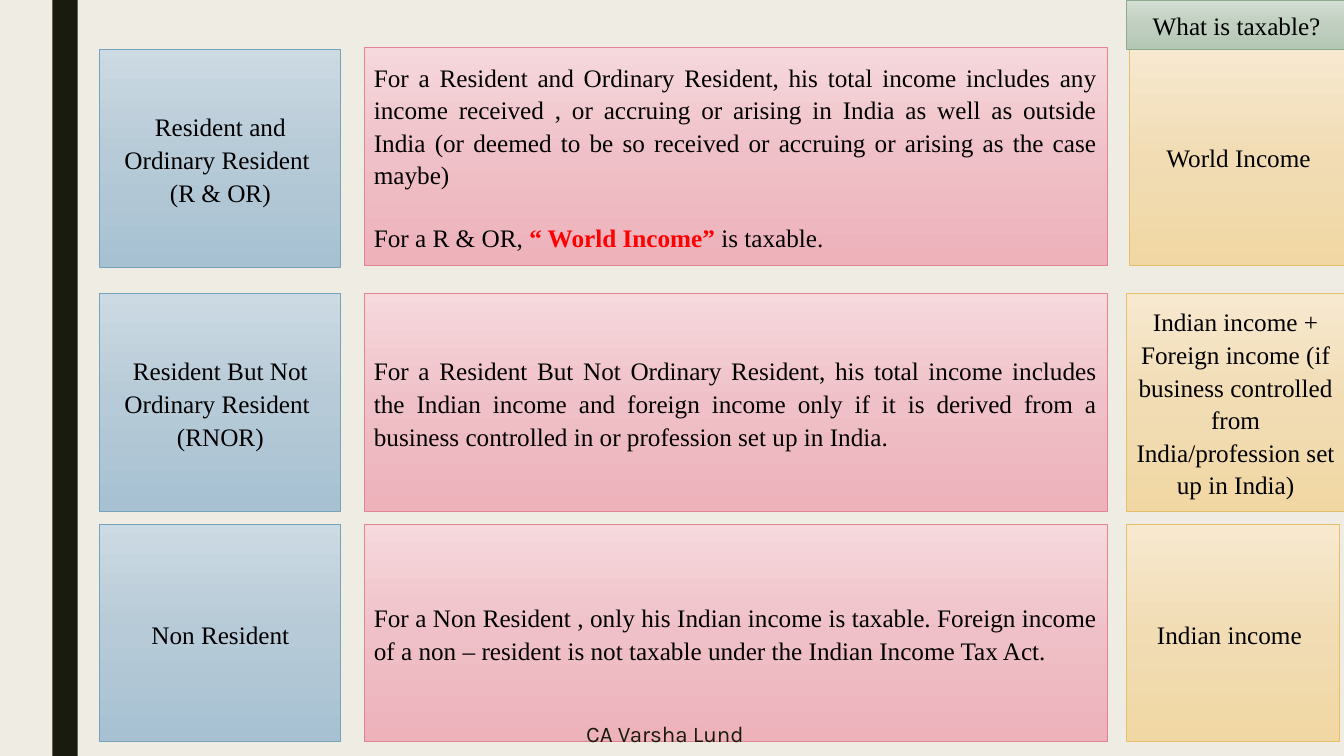
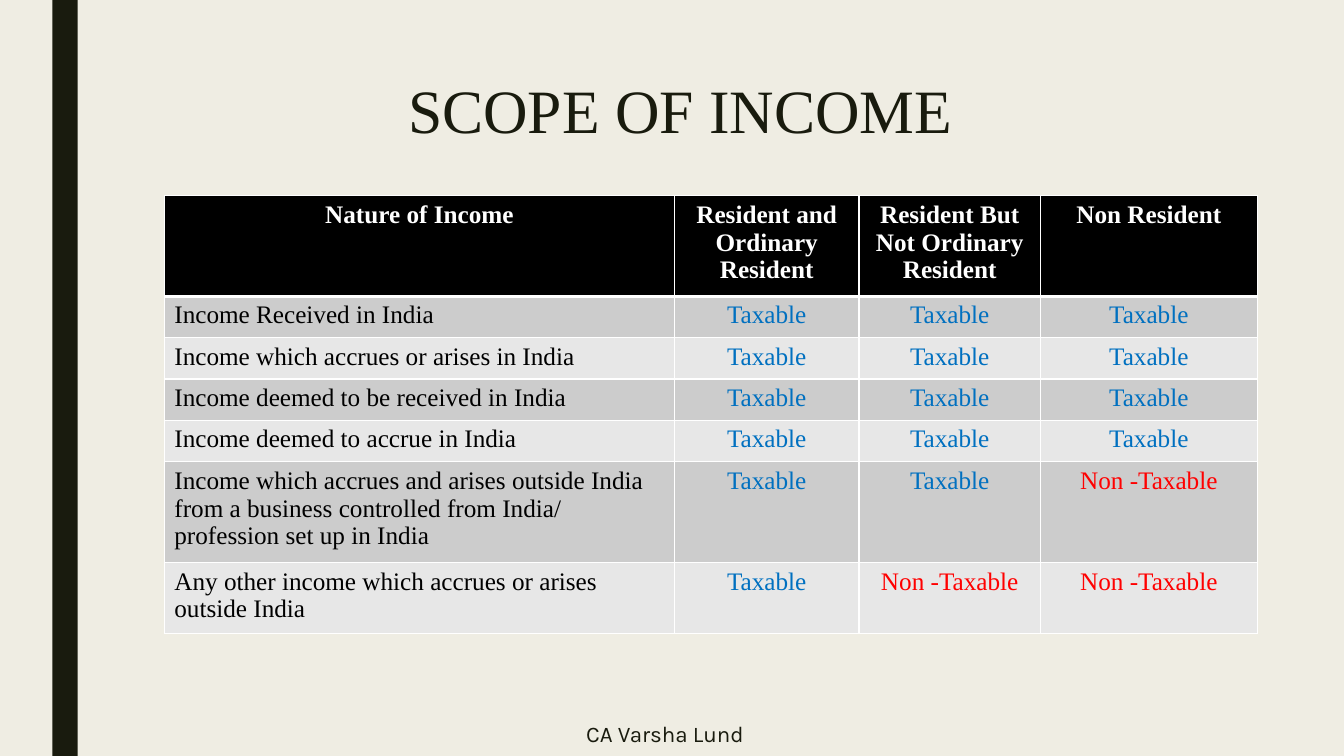
"""Build two slides on which income is taxable for each residential status."""
from copy import deepcopy
from dataclasses import dataclass
from typing import Optional

from lxml.etree import SubElement
from pptx import Presentation
from pptx.dml.color import RGBColor
from pptx.enum.shapes import MSO_SHAPE as Shape
from pptx.enum.text import MSO_ANCHOR as Anchor, PP_ALIGN as Align
from pptx.oxml.ns import qn
from pptx.util import Inches, Pt


@dataclass(frozen=True)
class Tint:
    stops: tuple[str, str, str]
    line: str


@dataclass(frozen=True)
class Theme:
    background: str = "EFEDE3"
    dark: str = "191B0E"
    black: str = "000000"
    white: str = "FFFFFF"
    red: str = "FF0000"
    blue: str = "0070C0"
    bands: tuple[str, str] = ("CCCCCC", "E7E7E7")
    status: Tint = Tint(("CCDAE3", "B6CAD7", "A7C1D2"), "77A2BB")
    rule: Tint = Tint(("F6D9DD", "EFC0C7", "EEB2BB"), "E28394")
    taxable: Tint = Tint(("F7E9D0", "F1DCB4", "F1D7A3"), "E6C069")
    heading: Tint = Tint(("D3DDD3", "C0CFC0", "B4C7B5"), "8DAB8E")
    serif: str = "Times New Roman"
    sans: str = "Karla"
    body_size: float = 18
    title_size: float = 44
    footer_size: float = 16
    box_spacing: float = 1.08
    title_spacing: float = 0.89
    paragraph_gap: float = 21.6


@dataclass(frozen=True)
class Box:
    left: float
    top: float
    width: float
    height: float

    def lengths(self) -> tuple:
        return tuple(Inches(value) for value in (self.left, self.top, self.width, self.height))


@dataclass(frozen=True)
class Piece:
    text: str
    color: str = "000000"
    bold: bool = False


@dataclass(frozen=True)
class Residency:
    top: float
    status: str
    rule: tuple[tuple[Piece, ...], ...]
    taxable: str
    rule_top: Optional[float] = None
    taxable_left: float = 11.17
    taxable_width: float = 2.17


THEME = Theme()
BOX_HEIGHT = 2.16

RESIDENCIES = (
    Residency(
        0.49, "Resident and Ordinary Resident \v(R & OR)",
        ((Piece("For a Resident and Ordinary Resident, his total income includes any income "
                "received , or accruing or arising in India as well as outside India (or deemed "
                "to be so received or accruing or arising as the case maybe)"),),
         (Piece("For a R & OR, "), Piece("“ World Income” ", THEME.red, True),
          Piece("is taxable. "))),
        "World Income", rule_top=0.47, taxable_left=11.2),
    Residency(
        2.91, "Resident But Not Ordinary Resident \v(RNOR)",
        ((Piece("For a Resident But Not Ordinary Resident, his total income includes the Indian "
                "income and foreign income only if it is derived from a business controlled in "
                "or profession set up in India."),),),
        "Indian income + Foreign income (if business controlled from India/profession set up "
        "in India)"),
    Residency(
        5.2, "Non Resident",
        ((Piece("For a Non Resident , only his Indian income is taxable. Foreign income of a "
                "non – resident is not taxable under the Indian Income Tax Act."),),),
        "Indian income ", taxable_width=2.11),
)

COLUMN_WIDTHS = (5.06, 1.83, 1.8, 2.15)
ROW_HEIGHT = 0.41
HEADERS = ("Nature of Income", "Resident and Ordinary Resident",
           "Resident But Not Ordinary Resident", "Non Resident")
INCOMES = (
    ("Income Received in India", 3),
    ("Income which accrues or arises in India", 3),
    ("Income deemed to be received in India", 3),
    ("Income deemed to accrue in India", 3),
    ("Income which accrues and arises outside India\n"
     "from a business controlled from India/ profession set up in India", 2),
    ("Any other income which accrues or arises outside India", 1),
)


def rgb(color: str) -> RGBColor:
    return RGBColor.from_string(color)


def write(paragraph, text: str, *, size: float = THEME.body_size, color: str = THEME.black,
          font: str = THEME.serif, bold: bool = False, align: Align = Align.CENTER,
          spacing: Optional[float] = None) -> None:
    paragraph.alignment = align
    if spacing is not None:
        paragraph.line_spacing = spacing
    for index, line in enumerate(text.split("\v")):
        if index:
            paragraph.add_line_break()
        run = paragraph.add_run()
        run.text = line
        run.font.size = Pt(size)
        run.font.name = font
        run.font.bold = bold
        run.font.color.rgb = rgb(color)


def paragraph_at(frame, index: int):
    return frame.add_paragraph() if index else frame.paragraphs[0]


def add_rectangle(slide, box: Box):
    shape = slide.shapes.add_shape(Shape.RECTANGLE, *box.lengths())
    shape.shadow.inherit = False
    return shape


def add_label(slide, box: Box, text: str, *, anchor: Anchor = Anchor.MIDDLE, **style) -> None:
    frame = slide.shapes.add_textbox(*box.lengths()).text_frame
    frame.word_wrap = True
    frame.vertical_anchor = anchor
    write(frame.paragraphs[0], text, **style)


def fill_gradient(shape, tint: Tint) -> None:
    shape.fill.gradient()
    shape.fill.gradient_angle = 270
    stop_list = shape._element.spPr.find(qn("a:gradFill")).find(qn("a:gsLst"))
    stop_list.insert(1, deepcopy(stop_list[0]))
    for stop, position, color in zip(shape.fill.gradient_stops, (0, 0.5, 1), tint.stops):
        stop.position = position
        stop.color.rgb = rgb(color)


def add_tinted_box(slide, box: Box, tint: Tint, paragraphs: tuple[tuple[Piece, ...], ...],
                   align: Align = Align.CENTER) -> None:
    shape = add_rectangle(slide, box)
    fill_gradient(shape, tint)
    shape.line.color.rgb = rgb(tint.line)
    shape.line.width = Pt(0.5)
    frame = shape.text_frame
    frame.word_wrap = True
    frame.vertical_anchor = Anchor.MIDDLE
    for index, pieces in enumerate(paragraphs):
        paragraph = paragraph_at(frame, index)
        if index:
            paragraph.space_before = Pt(THEME.paragraph_gap)
        for piece in pieces:
            write(paragraph, piece.text, color=piece.color, bold=piece.bold, align=align,
                  spacing=THEME.box_spacing)


def add_slide(presentation):
    slide = presentation.slides.add_slide(presentation.slide_layouts[6])
    slide.background.fill.solid()
    slide.background.fill.fore_color.rgb = rgb(THEME.background)
    band = add_rectangle(slide, Box(0.52, 0, 0.25, 7.5))
    band.fill.solid()
    band.fill.fore_color.rgb = rgb(THEME.dark)
    band.line.fill.background()
    return slide


def add_footer(slide) -> None:
    add_label(slide, Box(3.16, 7.06, 6.87, 0.44), "CA Varsha Lund",
              size=THEME.footer_size, font=THEME.sans, color=THEME.dark)


def set_borders(cell, top: float, bottom: float) -> None:
    properties = cell._tc.get_or_add_tcPr()
    for side, width in (("L", 1), ("R", 1), ("T", top), ("B", bottom)):
        line = SubElement(properties, qn(f"a:ln{side}"), w=str(Pt(width)))
        SubElement(SubElement(line, qn("a:solidFill")), qn("a:srgbClr"), val=THEME.white)


def fill_cell(cell, text: str, fill: str, *, top: float = 1, bottom: float = 1,
              **style) -> None:
    set_borders(cell, top, bottom)
    cell.fill.solid()
    cell.fill.fore_color.rgb = rgb(fill)
    for index, line in enumerate(text.split("\n")):
        write(paragraph_at(cell.text_frame, index), line, **style)


def add_scope_table(slide) -> None:
    row_count = len(INCOMES) + 1
    box = Box(1.63, 1.94, sum(COLUMN_WIDTHS), ROW_HEIGHT * row_count)
    table = slide.shapes.add_table(row_count, len(HEADERS), *box.lengths()).table
    for column, width in zip(table.columns, COLUMN_WIDTHS):
        column.width = Inches(width)
    for row in table.rows:
        row.height = Inches(ROW_HEIGHT)
    for column, header in enumerate(HEADERS):
        fill_cell(table.cell(0, column), header, THEME.black, bottom=3,
                  color=THEME.white, bold=True)
    for row, (income, taxable_count) in enumerate(INCOMES, 1):
        fill = THEME.bands[(row - 1) % 2]
        top = 3 if row == 1 else 1
        fill_cell(table.cell(row, 0), income, fill, top=top, align=Align.LEFT)
        for column in range(1, len(HEADERS)):
            taxable = column <= taxable_count
            fill_cell(table.cell(row, column), "Taxable" if taxable else "Non -Taxable", fill,
                      top=top, color=THEME.blue if taxable else THEME.red)


def build_residency_slide(presentation) -> None:
    slide = add_slide(presentation)
    for residency in RESIDENCIES:
        top = residency.top if residency.rule_top is None else residency.rule_top
        add_tinted_box(slide, Box(0.99, residency.top, 2.39, BOX_HEIGHT), THEME.status,
                       ((Piece(residency.status),),))
        add_tinted_box(slide, Box(3.61, top, 7.37, BOX_HEIGHT), THEME.rule,
                       residency.rule, Align.JUSTIFY)
        add_tinted_box(slide, Box(residency.taxable_left, top, residency.taxable_width,
                                  BOX_HEIGHT), THEME.taxable, ((Piece(residency.taxable),),))
    add_tinted_box(slide, Box(11.17, 0, 2.19, 0.49), THEME.heading,
                   ((Piece("What is taxable?"),),))
    add_footer(slide)


def build_scope_slide(presentation) -> None:
    slide = add_slide(presentation)
    add_label(slide, Box(1.5, 0.75, 10.5, 0.84), "SCOPE OF INCOME", anchor=Anchor.TOP,
              size=THEME.title_size, color=THEME.dark, spacing=THEME.title_spacing)
    add_scope_table(slide)
    add_footer(slide)


def main() -> None:
    presentation = Presentation()
    presentation.slide_width = Inches(13.33)
    presentation.slide_height = Inches(7.5)
    build_residency_slide(presentation)
    build_scope_slide(presentation)
    presentation.save("out.pptx")


if __name__ == "__main__":
    main()
